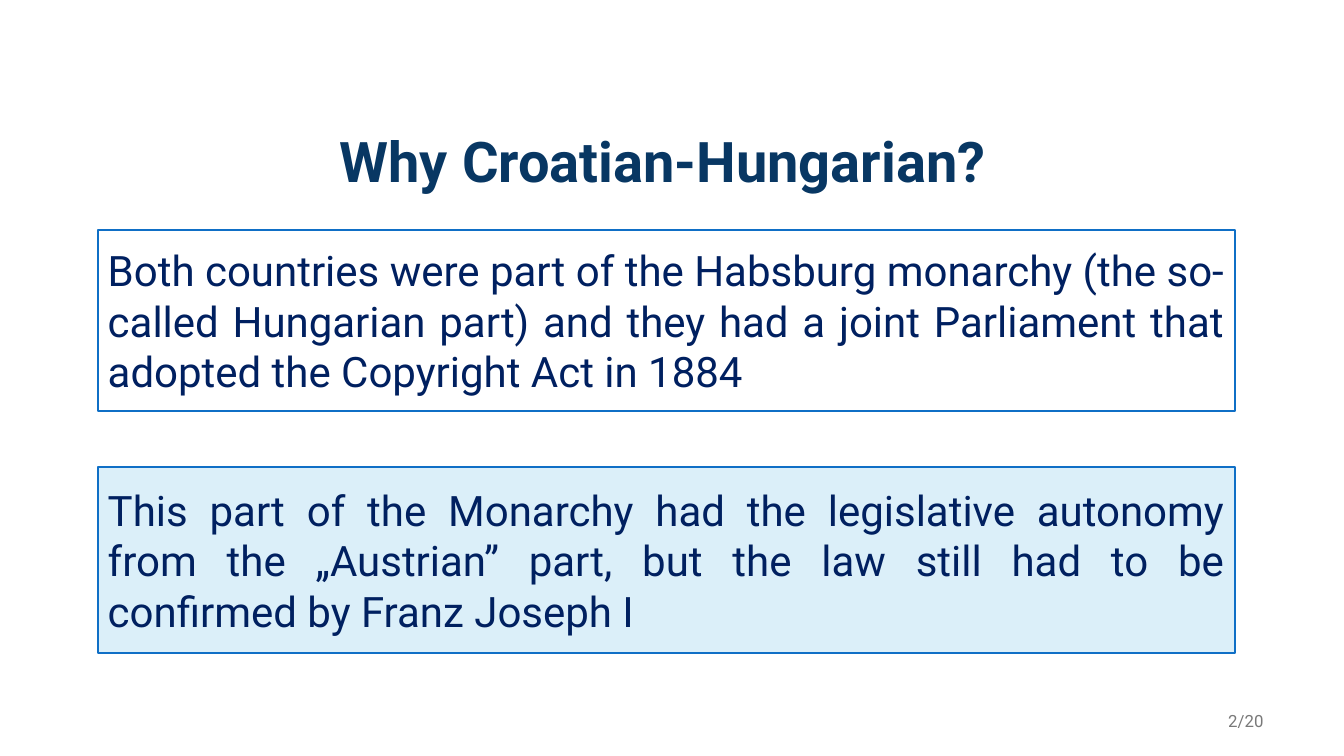
"""Build the slide on why the Copyright Act was Croatian-Hungarian."""
from pptx import Presentation
from pptx.dml.color import RGBColor
from pptx.enum.shapes import MSO_SHAPE as Shape
from pptx.enum.text import MSO_ANCHOR as Anchor, PP_ALIGN as Align
from pptx.util import Inches, Pt

COLORS = {
    "title": "083763",
    "number": "797979",
    "body": "002060",
    "border": "0F6FC6",
    "white": "FFFFFF",
    "pale": "DBEFF9",
}


def color(name):
    return RGBColor.from_string(COLORS[name])


def write(holder, text, size, ink, align, bold=False):
    frame = holder.text_frame
    frame.word_wrap = True
    frame.vertical_anchor = Anchor.MIDDLE
    paragraph = frame.paragraphs[0]
    paragraph.alignment = align
    run = paragraph.add_run()
    run.text = text
    run.font.name = "Roboto"
    run.font.size = Pt(size)
    run.font.bold = bold
    run.font.color.rgb = color(ink)
    return paragraph


deck = Presentation()
deck.slide_width, deck.slide_height = Inches(13.33), Inches(7.5)
slide = deck.slides.add_slide(deck.slide_layouts[6])

title = slide.shapes.add_textbox(Inches(0.61), Inches(1.15), Inches(11.92), Inches(0.96))
heading = write(title, "Why Croatian-Hungarian?", 40, "title", Align.CENTER, bold=True)
heading.line_spacing = 0.9

page_number = slide.shapes.add_textbox(Inches(9.63), Inches(6.95), Inches(3), Inches(0.4))
write(page_number, "2/20", 12, "number", Align.RIGHT)

reasons = [
    (2.28, 1.8, "white",
     "Both countries were part of the Habsburg monarchy (the so-called Hungarian part) "
     "and they had a joint Parliament that adopted the Copyright Act in 1884"),
    (4.63, 1.85, "pale",
     "This part of the Monarchy had the legislative autonomy from the „Austrian” part, "
     "but the law still had to be confirmed by Franz Joseph I"),
]
for top, height, background, text in reasons:
    reason = slide.shapes.add_shape(
        Shape.RECTANGLE, Inches(0.97), Inches(top), Inches(11.28), Inches(height))
    reason.shadow.inherit = False
    reason.fill.solid()
    reason.fill.fore_color.rgb = color(background)
    reason.line.color.rgb = color("border")
    reason.line.width = Pt(1.5)
    write(reason, text, 30, "body", Align.JUSTIFY)

deck.save("out.pptx")
